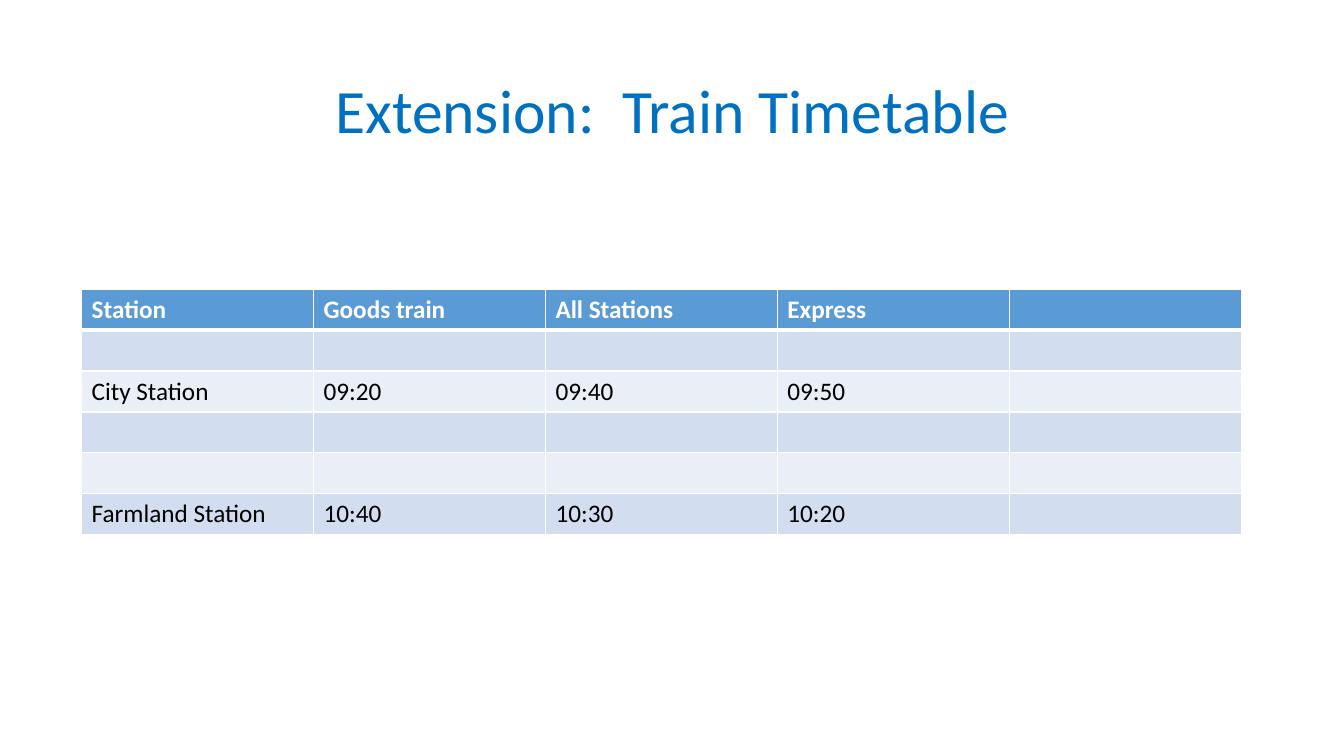
from dataclasses import dataclass

from lxml.etree import SubElement
from pptx import Presentation
from pptx.dml.color import RGBColor
from pptx.enum.text import MSO_ANCHOR, PP_ALIGN
from pptx.oxml.ns import qn
from pptx.util import Inches, Pt


@dataclass(frozen=True)
class Theme:
    font: str = "Calibri"
    title: str = "0070C0"
    head: str = "5B9BD5"
    bands: tuple = ("D2DEEF", "EAEFF7")
    light: str = "FFFFFF"
    dark: str = "000000"
    title_size: int = 44
    cell_size: int = 18
    thin: int = 1
    thick: int = 3


THEME = Theme()

TIMES = [
    ["Station", "Goods train", "All Stations", "Express", ""],
    [""] * 5,
    ["City Station", "09:20", "09:40", "09:50", ""],
    [""] * 5,
    [""] * 5,
    ["Farmland Station", "10:40", "10:30", "10:20", ""],
]


def write(frame, text, size, color, bold=False, align=PP_ALIGN.LEFT, spacing=1.0):
    para = frame.paragraphs[0]
    para.alignment = align
    para.line_spacing = spacing
    para.font.size = Pt(size)
    if text:
        run = para.add_run()
        run.text = text
        run.font.name = THEME.font
        run.font.size = Pt(size)
        run.font.bold = bold
        run.font.color.rgb = RGBColor.from_string(color)


def add_title(slide, text):
    title = slide.shapes.title
    title.left, title.top = Inches(0.92), Inches(0.4)
    title.width, title.height = Inches(11.5), Inches(1.45)
    frame = title.text_frame
    frame.word_wrap = True
    frame.vertical_anchor = MSO_ANCHOR.MIDDLE
    write(frame, text, THEME.title_size, THEME.title,
          align=PP_ALIGN.CENTER, spacing=0.9)


def set_edges(cell, top, bottom):
    """Draw the four cell borders; top and bottom are widths in points."""
    props = cell._tc.get_or_add_tcPr()
    widths = {"lnL": THEME.thin, "lnR": THEME.thin, "lnT": top, "lnB": bottom}
    for tag, width in widths.items():
        line = SubElement(props, qn(f"a:{tag}"), w=str(Pt(width)))
        fill = SubElement(line, qn("a:solidFill"))
        SubElement(fill, qn("a:srgbClr"), val=THEME.light)


def style_cell(cell, text, row):
    head = row == 0
    set_edges(cell,
              top=THEME.thick if row == 1 else THEME.thin,
              bottom=THEME.thick if head else THEME.thin)
    cell.fill.solid()
    shade = THEME.head if head else THEME.bands[(row - 1) % 2]
    cell.fill.fore_color.rgb = RGBColor.from_string(shade)
    write(cell.text_frame, text, THEME.cell_size,
          THEME.light if head else THEME.dark, bold=head)


def add_grid(slide, rows):
    width, height = Inches(2.3), Inches(0.405)
    count = len(rows[0])
    table = slide.shapes.add_table(
        len(rows), count, Inches(0.81), Inches(2.87),
        width * count, height * len(rows)).table
    for col in table.columns:
        col.width = width
    for r, texts in enumerate(rows):
        table.rows[r].height = height
        for c, text in enumerate(texts):
            style_cell(table.cell(r, c), text, r)


def main():
    deck = Presentation()
    deck.slide_width, deck.slide_height = Inches(13.33), Inches(7.5)
    slide = deck.slides.add_slide(deck.slide_layouts[5])
    add_title(slide, "Extension:  Train Timetable")
    add_grid(slide, TIMES)
    deck.save("out.pptx")


if __name__ == "__main__":
    main()
